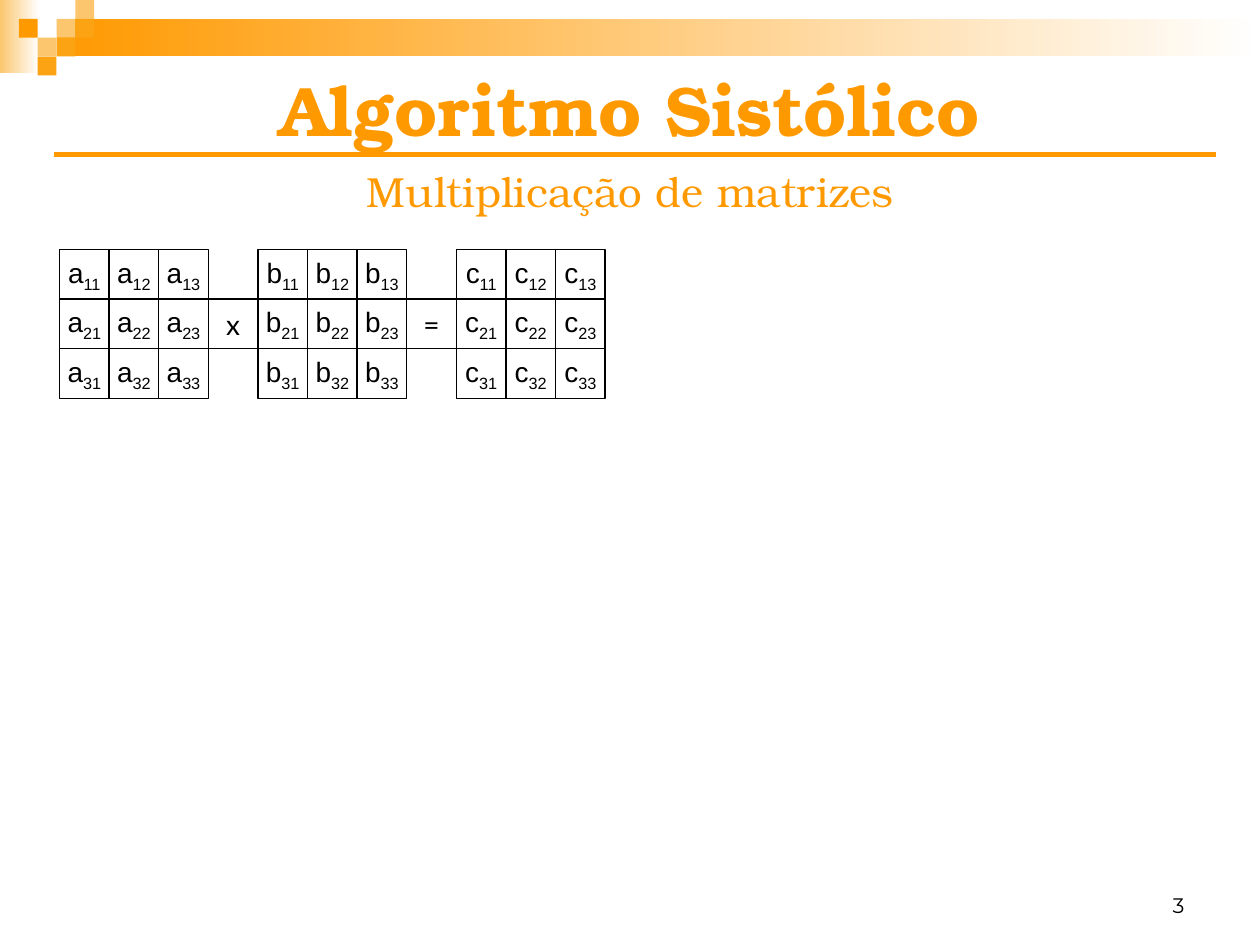
from pptx import Presentation
from pptx.dml.color import RGBColor
from pptx.enum.shapes import MSO_CONNECTOR, MSO_SHAPE
from pptx.enum.text import MSO_ANCHOR as ANCHOR, PP_ALIGN as ALIGN
from pptx.oxml.ns import qn
from pptx.util import Cm, Pt

ORANGE, AMBER, PEACH = "FF9900", "FBA313", "FCC66E"
BLACK, WHITE = "000000", "FFFFFF"
SERIF = "TeX Gyre Bonum"
CELL = 1


def rgb(color):
    return RGBColor.from_string(color)


def add_run(p, text, font, size, color=BLACK, bold=False, baseline=None):
    r = p.add_run()
    r.text = text
    r.font.name, r.font.size, r.font.bold = font, Pt(size), bold
    r.font.color.rgb = rgb(color)
    if baseline:
        r.font._element.set("baseline", str(baseline))


def add_rect(s, x, y, w, h):
    sp = s.shapes.add_shape(MSO_SHAPE.RECTANGLE, Cm(x), Cm(y), Cm(w), Cm(h))
    sp.shadow.inherit = False
    return sp


def add_block(s, x, y, w, h, start, end=None):
    """Borderless rectangle, solid or fading from left to right."""
    sp = add_rect(s, x, y, w, h)
    sp.line.fill.background()
    if end is None:
        sp.fill.solid()
        sp.fill.fore_color.rgb = rgb(start)
        return
    sp.fill.gradient()
    sp.fill.gradient_angle = 0
    for stop, color in zip(sp.fill.gradient_stops, (start, end)):
        stop.color.rgb = rgb(color)


def add_text(s, x, y, w, h, text, font, size, color=BLACK, bold=False,
             align=ALIGN.CENTER, anchor=ANCHOR.MIDDLE):
    tf = s.shapes.add_textbox(Cm(x), Cm(y), Cm(w), Cm(h)).text_frame
    tf.word_wrap, tf.vertical_anchor = True, anchor
    p = tf.paragraphs[0]
    p.alignment = align
    add_run(p, text, font, size, color, bold)


def add_banner(s, x, y, w):
    unit = 0.38
    add_block(s, x, y, 0.79, 1.47, PEACH, WHITE)
    add_block(s, x + 3 * unit, y + unit, w - 3 * unit, 2 * unit, ORANGE, WHITE)
    squares = [(3, 1, PEACH), (4, 0, PEACH), (4, 1, AMBER), (2, 2, PEACH),
               (1, 1, ORANGE), (3, 2, AMBER), (2, 3, AMBER)]
    for col, row, color in squares:
        add_block(s, x + col * unit, y + row * unit, unit, unit, color)


def add_heading(s, x, y, w):
    add_text(s, x, y, w, 1.85, "Algoritmo Sistólico", SERIF, 40, ORANGE, bold=True)
    rule_y = Cm(y + 1.85)
    rule = s.shapes.add_connector(MSO_CONNECTOR.STRAIGHT, Cm(x - 0.18), rule_y,
                                  Cm(x + w + 0.38), rule_y)
    rule.line.color.rgb, rule.line.width = rgb(ORANGE), Pt(3)
    sp_pr = rule._element.spPr
    sp_pr.append(sp_pr.makeelement(qn("a:effectLst"), {}))
    add_text(s, x, y + 2.26, w, 0.61, "Multiplicação de matrizes", SERIF, 24, ORANGE)


def add_cell(s, x, y, text, font="Arial", index=""):
    sp = add_rect(s, x, y, CELL, CELL)
    sp.fill.background()
    sp.line.color.rgb, sp.line.width = rgb(BLACK), Pt(0.75)
    tf = sp.text_frame
    tf.word_wrap, tf.vertical_anchor = False, ANCHOR.MIDDLE
    p = tf.paragraphs[0]
    p.alignment = ALIGN.CENTER
    add_run(p, text, font, 16)
    if index:
        add_run(p, index, font, 16, baseline=-25000)


def add_matrix(s, x, y, name, n=3):
    for row in range(n):
        for col in range(n):
            add_cell(s, x + col * CELL, y + row * CELL, name,
                     index=f"{row + 1}{col + 1}")


def add_equation(s, x, y):
    for i, name in enumerate("abc"):
        add_matrix(s, x + 4 * i * CELL, y, name)
    for i, sign in enumerate("x="):
        add_cell(s, x + (4 * i + 3) * CELL, y + CELL, sign, font="Lato")


def main():
    prs = Presentation()
    prs.slide_width, prs.slide_height = Cm(25.4), Cm(19.05)
    s = prs.slides.add_slide(prs.slide_layouts[6])
    add_banner(s, 0, 0, 25.4)
    add_text(s, 18.2, 17.35, 5.93, 1.27, "3", "Montserrat", 12,
             align=ALIGN.RIGHT, anchor=ANCHOR.BOTTOM)
    add_heading(s, 1.27, 1.27, 22.86)
    add_equation(s, 1.2, 5.03)
    prs.save("out.pptx")


if __name__ == "__main__":
    main()
